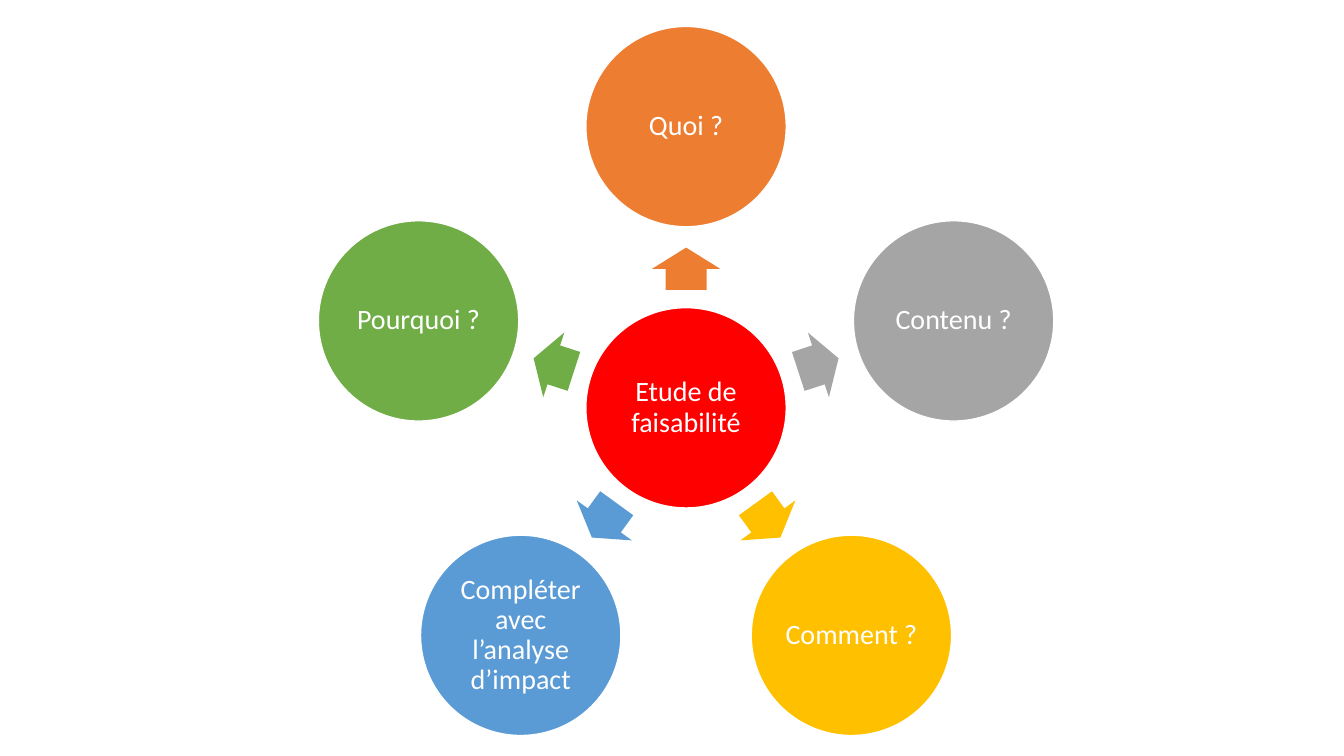
from math import cos, radians, sin

from pptx import Presentation
from pptx.dml.color import RGBColor
from pptx.enum.shapes import MSO_SHAPE
from pptx.enum.text import MSO_ANCHOR, PP_ALIGN
from pptx.util import Inches, Pt

CIRCLE, ARROW = MSO_SHAPE.OVAL, MSO_SHAPE.RIGHT_ARROW
MIDDLE, CENTER = MSO_ANCHOR.MIDDLE, PP_ALIGN.CENTER

SLIDE_WIDTH, SLIDE_HEIGHT = 13.33, 7.5
WHITE = "FFFFFF"

# Hub centre, as shares of the slide's width and height
HUB_X = SLIDE_WIDTH * 51.05 / 100
HUB_Y = SLIDE_HEIGHT * 53.95 / 100

# Sizes and radii, as shares of the slide's height
DIAMETER = SLIDE_HEIGHT * 26.5 / 100
CIRCLE_ORBIT = SLIDE_HEIGHT * 37.2 / 100
ARROW_ORBIT = SLIDE_HEIGHT * 18.4 / 100
ARROW_LENGTH = SLIDE_HEIGHT * 5.6 / 100
ARROW_WIDTH = SLIDE_HEIGHT * 9 / 100

HUB = ("Etude de faisabilité", "FF0000")
# Clockwise from the top
SATELLITES = [
    ("Quoi ?", "ED7D31"),
    ("Contenu ?", "A5A5A5"),
    ("Comment ?", "FFC000"),
    ("Compléter avec l’analyse d’impact", "5B9BD5"),
    ("Pourquoi ?", "70AD47"),
]


def color(hex_string):
    return RGBColor.from_string(hex_string)


def around_hub(radius, angle):
    """Point at a clockwise angle in degrees, measured from the right."""
    turn = radians(angle)
    return HUB_X + radius * cos(turn), HUB_Y + radius * sin(turn)


def add_centered_shape(page, kind, center, width, height, fill):
    x, y = center
    shape = page.shapes.add_shape(
        kind, Inches(x - width / 2), Inches(y - height / 2),
        Inches(width), Inches(height))
    shape.shadow.inherit = False
    shape.fill.solid()
    shape.fill.fore_color.rgb = color(fill)
    shape.line.fill.background()
    return shape


def add_circle(page, center, text, fill):
    circle = add_centered_shape(page, CIRCLE, center, DIAMETER, DIAMETER, fill)
    circle.line.color.rgb = color(WHITE)
    circle.line.width = Pt(1)

    box = circle.text_frame
    box.word_wrap = True
    box.vertical_anchor = MIDDLE
    box.margin_left = box.margin_right = Inches(0.03)
    box.margin_top = box.margin_bottom = Inches(0.03)

    para = box.paragraphs[0]
    para.alignment = CENTER
    para.line_spacing = 0.9
    span = para.add_run()
    span.text = text
    span.font.name = "Calibri"
    span.font.size = Pt(20)
    span.font.color.rgb = color(WHITE)


def add_arrow(page, angle, fill):
    arrow = add_centered_shape(page, ARROW, around_hub(ARROW_ORBIT, angle),
                               ARROW_LENGTH, ARROW_WIDTH, fill)
    arrow.adjustments[0] = 0.6
    arrow.adjustments[1] = 0.5
    arrow.rotation = angle % 360


def main():
    deck = Presentation()
    deck.slide_width = Inches(SLIDE_WIDTH)
    deck.slide_height = Inches(SLIDE_HEIGHT)
    page = deck.slides.add_slide(deck.slide_layouts[6])

    # Hub
    add_circle(page, (HUB_X, HUB_Y), *HUB)

    # Satellites, each with an arrow pointing at it
    step = 360 / len(SATELLITES)
    for index, (text, fill) in enumerate(SATELLITES):
        angle = -90 + index * step
        add_arrow(page, angle, fill)
        add_circle(page, around_hub(CIRCLE_ORBIT, angle), text, fill)

    deck.save("out.pptx")


if __name__ == "__main__":
    main()
